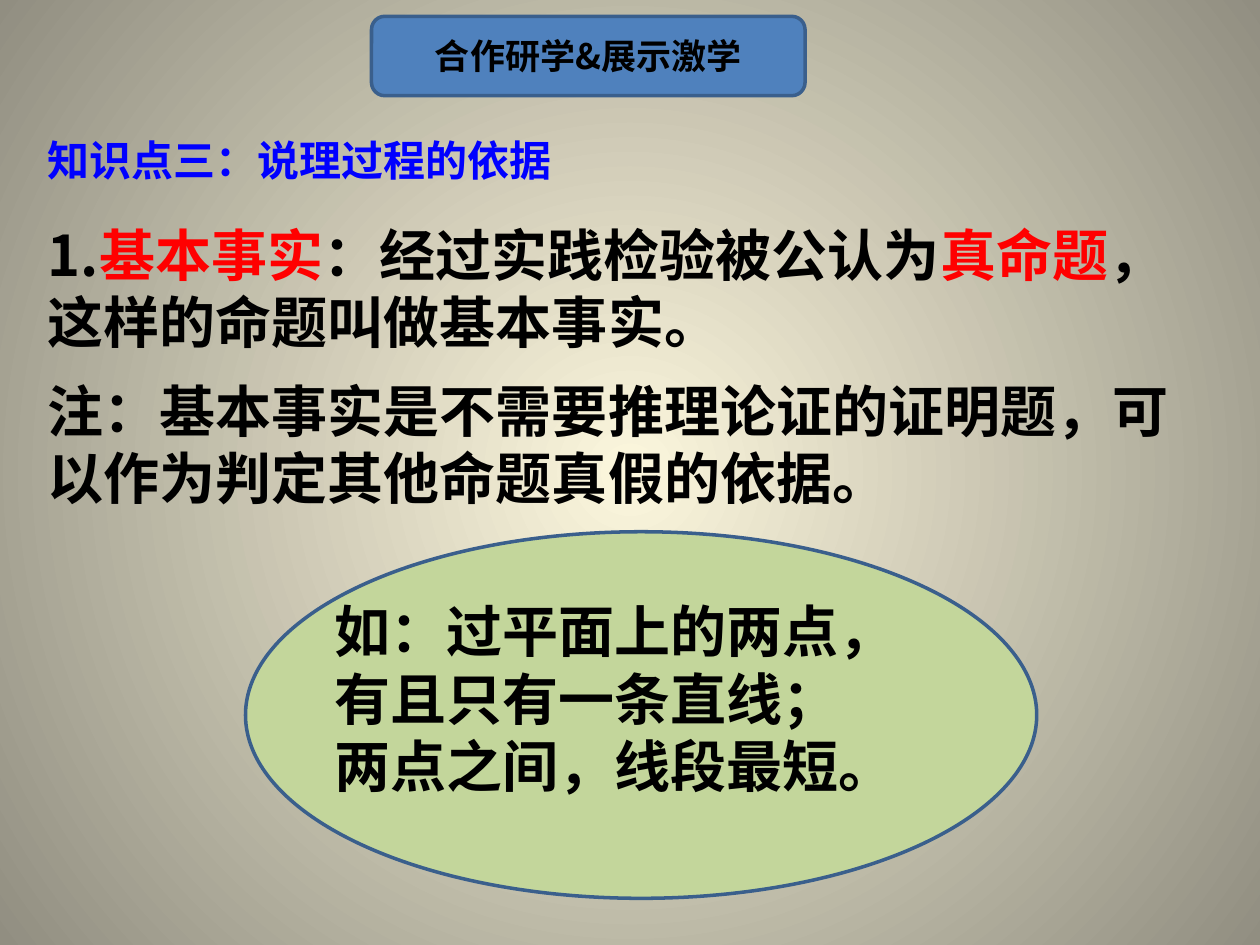
import lxml.etree
import pptx
import pptx.dml.color
import pptx.enum.shapes
import pptx.enum.text
import pptx.oxml.ns
import pptx.util

Cm = pptx.util.Cm
Pt = pptx.util.Pt
RGB = pptx.dml.color.RGBColor
Shape = pptx.enum.shapes.MSO_SHAPE
Align = pptx.enum.text.PP_ALIGN
Anchor = pptx.enum.text.MSO_ANCHOR
Fit = pptx.enum.text.MSO_AUTO_SIZE
qn = pptx.oxml.ns.qn

BLACK = RGB(0x00, 0x00, 0x00)
RED = RGB(0xFF, 0x00, 0x00)
BLUE = RGB(0x00, 0x00, 0xFF)
STEEL = RGB(0x4F, 0x81, 0xBD)
EDGE = RGB(0x3A, 0x5F, 0x8C)
GREEN = RGB(0xC3, 0xD6, 0x9B)
CREAM = RGB(0xFC, 0xF7, 0xDD)
STONE = RGB(0x91, 0x8E, 0x81)
FONT = "Noto Sans CJK SC"


def write(frame, paras, size=32, color=BLACK, align=Align.LEFT,
          anchor=Anchor.TOP, gap=0, line=1.0, wrap=True, fit=Fit.NONE):
    frame.word_wrap = wrap
    frame.auto_size = fit
    frame.vertical_anchor = anchor
    for row, runs in enumerate(paras):
        para = frame.add_paragraph() if row else frame.paragraphs[0]
        para.alignment = align
        para.line_spacing = line
        para.space_before = Pt(gap if row else 0)
        props = para._p.get_or_add_pPr()
        props.set("marL", "0")
        props.set("indent", "0")
        lxml.etree.SubElement(props, qn("a:buNone"))
        for text, tint in runs:
            run = para.add_run()
            run.text = text
            font = run.font
            font.size = Pt(size)
            font.bold = True
            font.color.rgb = tint or color
            font.name = FONT
            east = lxml.etree.SubElement(run._r.get_or_add_rPr(), qn("a:ea"))
            east.set("typeface", FONT)


class Deck:
    def __init__(self):
        self.show = pptx.Presentation()
        self.show.slide_width = Cm(25.4)
        self.show.slide_height = Cm(19.05)
        self.slide = self.show.slides.add_slide(self.show.slide_layouts[1])

    def glow(self, inner, outer):
        fill = self.slide.background.fill
        fill.gradient()
        for stop, color in zip(fill.gradient_stops, (inner, outer)):
            stop.color.rgb = color
        grad = self.slide.element.find(".//" + qn("a:gradFill"))
        grad.remove(grad.find(qn("a:lin")))
        ring = lxml.etree.SubElement(grad, qn("a:path"), path="circle")
        lxml.etree.SubElement(ring, qn("a:fillToRect"),
                              dict.fromkeys("ltrb", "50000"))

    def holder(self, index, box, paras, **style):
        item = self.slide.placeholders[index]
        item.left, item.top, item.width, item.height = map(Cm, box)
        write(item.text_frame, paras, **style)

    def shape(self, kind, box, fill):
        item = self.slide.shapes.add_shape(kind, *map(Cm, box))
        item.shadow.inherit = False
        item.fill.solid()
        item.fill.fore_color.rgb = fill
        item.line.color.rgb = EDGE
        item.line.width = Pt(2)
        return item

    def text(self, box, paras, **style):
        item = self.slide.shapes.add_textbox(*map(Cm, box))
        write(item.text_frame, paras, **style)


def main():
    deck = Deck()
    deck.glow(CREAM, STONE)
    badge = deck.shape(Shape.ROUNDED_RECTANGLE, (7.49, 0.33, 8.74, 1.6), STEEL)
    write(badge.text_frame, [[("合作研学&展示激学", None)]],
          size=20, align=Align.CENTER, anchor=Anchor.MIDDLE)
    deck.holder(0, (0.71, 2.34, 10.77, 1.42),
                [[("知识点三：说理过程的依据", None)]],
                size=24, color=BLUE, line=1.25, wrap=False)
    deck.holder(1, (0.71, 4.32, 23.19, 6.15), [
        [("1.", None), ("基本事实", RED), ("：经过实践检验被公认为", None),
         ("真命题", RED), ("，这样的命题叫做基本事实。", None)],
        [("注：基本事实是不需要推理论证的证明题，可以作为判定其他命题真假的依据。", None)],
    ], gap=12)
    deck.shape(Shape.OVAL, (4.95, 10.72, 15.95, 7.39), GREEN)
    deck.text((6.5, 11.91, 12.4, 4.37), [
        [("如：过平面上的两点，有且只有一条直线；", None)],
        [("两点之间，线段最短。", None)],
    ], fit=Fit.SHAPE_TO_FIT_TEXT)
    deck.show.save("out.pptx")


if __name__ == "__main__":
    main()
